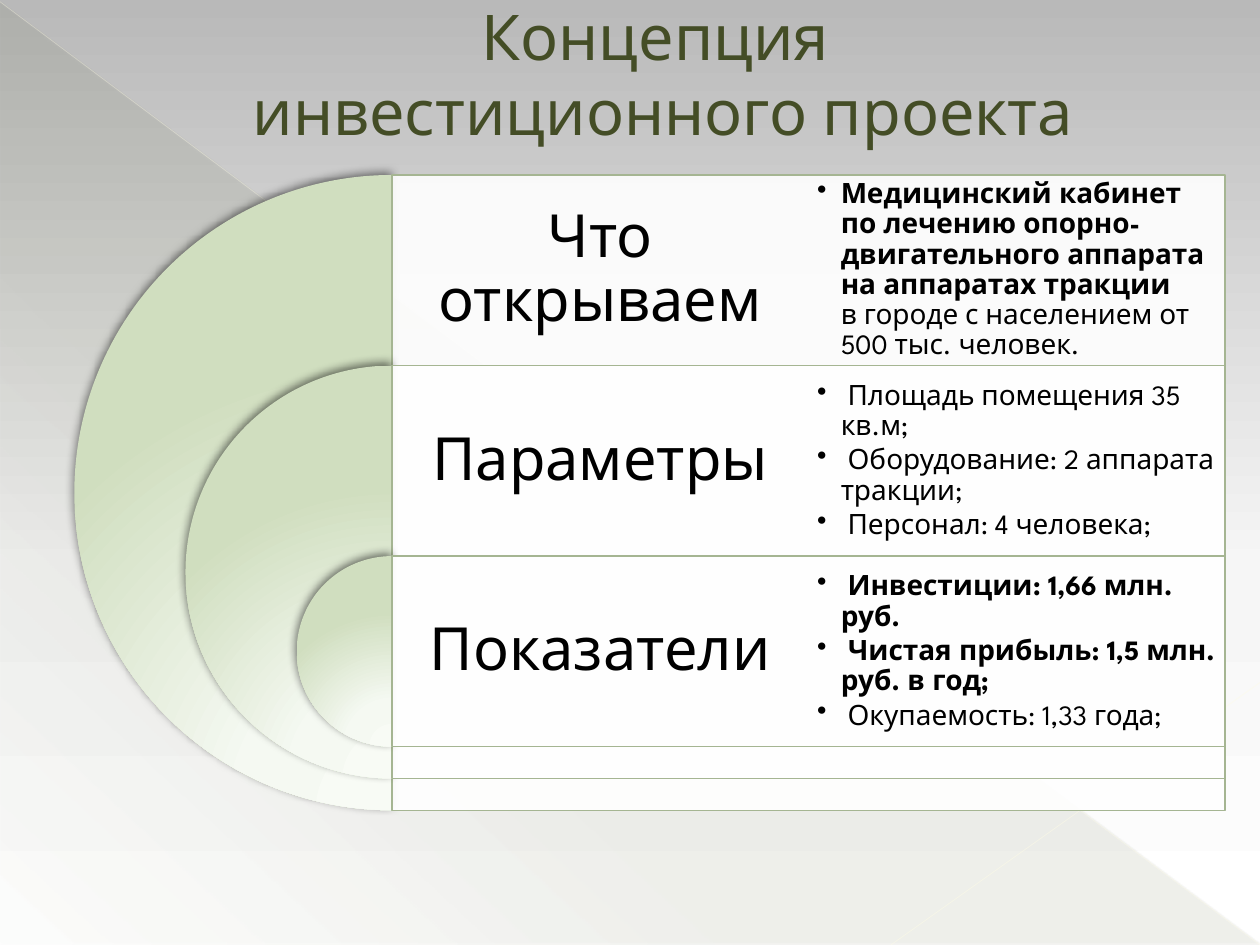
from dataclasses import dataclass

from lxml.etree import SubElement
from pptx import Presentation
from pptx.dml.color import RGBColor
from pptx.enum.shapes import MSO_CONNECTOR, MSO_SHAPE
from pptx.enum.text import MSO_ANCHOR, PP_ALIGN
from pptx.oxml import parse_xml
from pptx.oxml.ns import nsdecls, qn
from pptx.util import Pt


@dataclass(frozen=True)
class Theme:
    font: str = "League Spartan"
    olive: str = "444D26"
    sage: str = "A5B592"
    black: str = "000000"
    white: str = "FFFFFF"
    title_size: float = 36
    heading_size: float = 34
    detail_size: float = 16


@dataclass(frozen=True)
class Box:
    left: float
    top: float
    width: float
    height: float

    def points(self):
        return [Pt(n) for n in (self.left, self.top, self.width, self.height)]


THEME = Theme()
LINEAR = '<a:lin ang="{}" scaled="0"/>'
GLOW = ('<a:path path="circle"><a:fillToRect l="50000" t="155000" '
        'r="50000" b="-55000"/></a:path>')
SKY_STOPS = [(0, "B9B9B9", 100), (60, "F6F6F6", 100), (100, "FFFFFF", 100)]
SHADE_STOPS = [(0, THEME.olive, 10), (70, THEME.olive, 8), (100, THEME.olive, 1)]
ARC_STOPS = [(0, "F8FBF5", 100), (34, "F5F9F2", 100), (100, "D0DEBF", 100)]
ROWS = [
    ("Что открываем", [
        [("Медицинский кабинет по лечению опорно-двигательного аппарата "
          "на аппаратах тракции \n", True),
         ("в городе с населением от 500 тыс. человек.", False)],
    ]),
    ("Параметры", [
        [(" Площадь помещения 35 кв.м;", False)],
        [(" Оборудование: 2 аппарата тракции;", False)],
        [(" Персонал: 4 человека;", False)],
    ]),
    ("Показатели", [
        [(" ", False), ("Инвестиции: 1,66 млн. руб.", True)],
        [(" Чистая прибыль: 1,5 млн. руб. в год;", True)],
        [(" Окупаемость: 1,33 года;", False)],
    ]),
]


def set_alpha(color, percent):
    SubElement(color, qn("a:alpha")).set("val", str(percent * 1000))


def apply_gradient(fill, element, stops, direction):
    fill.solid()
    fill.fore_color.rgb = RGBColor.from_string(THEME.white)
    marks = "".join(
        f'<a:gs pos="{pos * 1000}"><a:srgbClr val="{color}">'
        f'<a:alpha val="{alpha * 1000}"/></a:srgbClr></a:gs>'
        for pos, color, alpha in stops)
    solid = next(element.iter(qn("a:solidFill")))
    solid.getparent().replace(solid, parse_xml(
        f'<a:gradFill {nsdecls("a")} rotWithShape="1"><a:gsLst>{marks}</a:gsLst>'
        f'{direction}</a:gradFill>'))


def add_plain_shape(page, kind, box):
    shape = page.shapes.add_shape(kind, *box.points())
    shape.shadow.inherit = False
    shape.line.fill.background()
    return shape


def add_ray(page, start, end, color, width, alpha):
    ray = page.shapes.add_connector(
        MSO_CONNECTOR.STRAIGHT, *[Pt(n) for n in (*start, *end)])
    ray.line.width = Pt(width)
    ray.line.color.rgb = RGBColor.from_string(color)
    properties = ray.element.spPr
    set_alpha(next(properties.iter(qn("a:srgbClr"))), alpha)
    SubElement(properties, qn("a:effectLst"))


def add_frame(page, box, side, edge):
    frame = page.shapes.add_textbox(*box.points()).text_frame
    frame.word_wrap = True
    frame.vertical_anchor = MSO_ANCHOR.MIDDLE
    frame.margin_left = frame.margin_right = Pt(side)
    frame.margin_top = frame.margin_bottom = Pt(edge)
    return frame


def add_text(para, text, size, color, bold=False):
    for index, piece in enumerate(text.split("\n")):
        if index:
            para.add_line_break()
        if piece:
            span = para.add_run()
            span.text = piece
            span.font.name = THEME.font
            span.font.size = Pt(size)
            span.font.bold = bold
            span.font.color.rgb = RGBColor.from_string(color)


def add_backdrop(page, box):
    apply_gradient(page.background.fill, page.element, SKY_STOPS,
                   LINEAR.format(90 * 60000))
    shade = add_plain_shape(page, MSO_SHAPE.RIGHT_TRIANGLE, box)
    apply_gradient(shade.fill, shade.element, SHADE_STOPS,
                   LINEAR.format(133 * 60000))
    right, bottom = box.left + box.width, box.top + box.height
    add_ray(page, (box.left, box.top), (right, bottom), "FFFDE3", 0.39, 35)
    add_ray(page, (right, bottom - 150), (right - 211, bottom), "FFFDE6", 0.47, 45)


def add_title(page, box):
    para = add_frame(page, box, 7.2, 3.6).paragraphs[0]
    para.alignment = PP_ALIGN.CENTER
    para._p.get_or_add_pPr().set("marL", str(Pt(38)))
    add_text(para, "Концепция \nинвестиционного проекта",
             THEME.title_size, THEME.olive)


def add_arc(page, box):
    arc = add_plain_shape(page, MSO_SHAPE.PIE, box)
    arc.adjustments[0] = 54
    arc.adjustments[1] = 162
    apply_gradient(arc.fill, arc.element, ARC_STOPS, GLOW)
    effects = arc.element.spPr.find(qn("a:effectLst"))
    effects.append(parse_xml(
        f'<a:outerShdw {nsdecls("a")} blurRad="{Pt(5)}" dist="{Pt(2)}" '
        f'dir="{245 * 60000}" rotWithShape="0"><a:srgbClr val="{THEME.black}">'
        '<a:alpha val="50000"/></a:srgbClr></a:outerShdw>'))


def add_panel(page, box):
    panel = add_plain_shape(page, MSO_SHAPE.RECTANGLE, box)
    panel.fill.solid()
    panel.fill.fore_color.rgb = RGBColor.from_string(THEME.white)
    set_alpha(next(panel.element.iter(qn("a:srgbClr"))), 90)
    panel.line.color.rgb = RGBColor.from_string(THEME.sage)
    panel.line.width = Pt(0.75)


def add_heading(page, box, text):
    para = add_frame(page, box, 10, 10).paragraphs[0]
    para.alignment = PP_ALIGN.CENTER
    para.line_spacing = 0.9
    add_text(para, text, THEME.heading_size, THEME.black)


def add_details(page, box, items):
    frame = add_frame(page, box, 5, 5)
    for index, item in enumerate(items):
        para = frame.add_paragraph() if index else frame.paragraphs[0]
        para.line_spacing = 0.9
        para.space_after = Pt(2.4)
        properties = para._p.get_or_add_pPr()
        properties.set("marL", str(Pt(13.5)))
        properties.set("indent", str(Pt(-13.5)))
        SubElement(properties, qn("a:buChar")).set("char", "•")
        for text, bold in item:
            add_text(para, text, THEME.detail_size, THEME.black, bold)


def add_target(page, box):
    diameter = box.height
    center = box.left + diameter / 2
    panel_width = box.left + box.width - center
    column, band = panel_width / 2, diameter * 0.3
    for index, (heading, items) in enumerate(ROWS):
        top = box.top + index * band
        size = diameter * (1 - 0.35 * index)
        add_arc(page, Box(center - size / 2, top, size, size))
        add_panel(page, Box(center, top, panel_width, size))
        add_heading(page, Box(center, top, column, band), heading)
        add_details(page, Box(center + column, top, column, band), items)


def main():
    deck = Presentation()
    deck.slide_width, deck.slide_height = Pt(720), Pt(540)
    page = deck.slides.add_slide(deck.slide_layouts[6])
    add_backdrop(page, Box(0, 1, 720, 539))
    add_target(page, Box(42.5, 100, 657.5, 363))
    add_title(page, Box(0, -2, 720, 87))
    deck.save("out.pptx")


if __name__ == "__main__":
    main()
